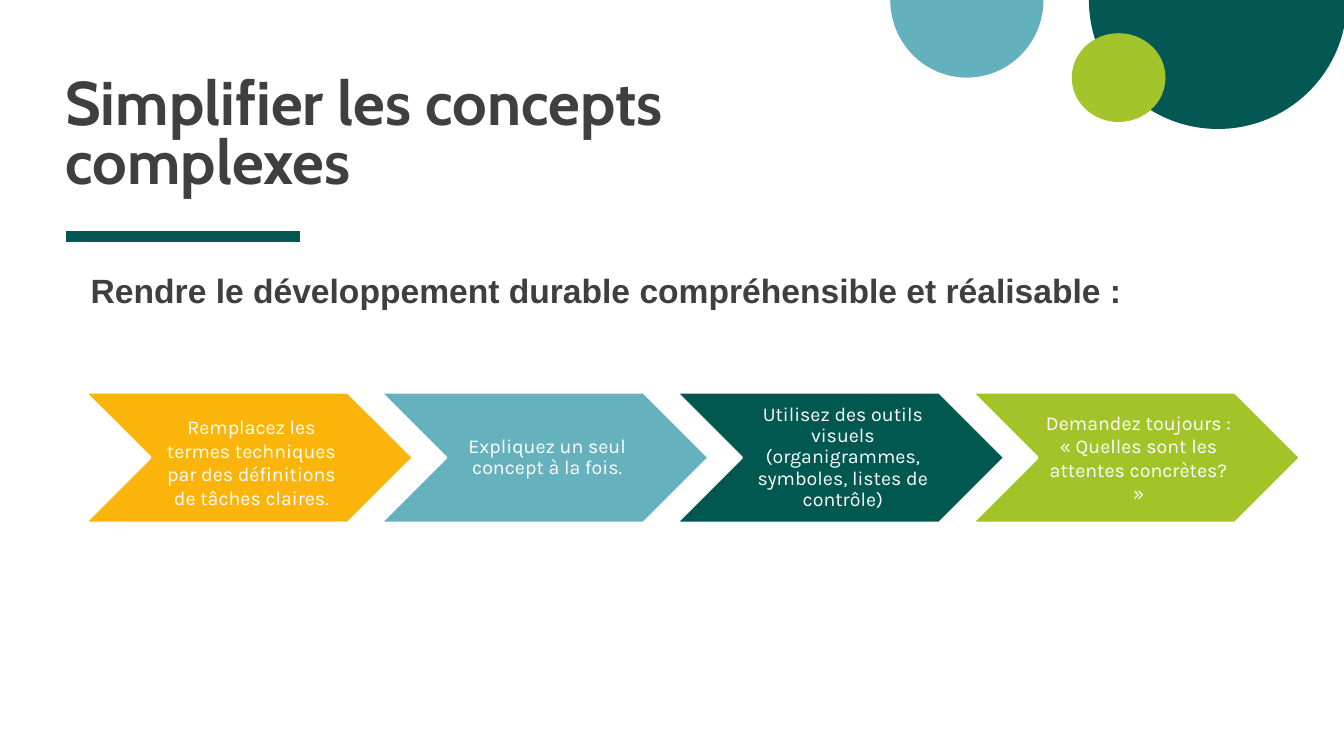
import pptx
import pptx.dml.color
import pptx.enum.shapes
import pptx.enum.text
import pptx.util
from lxml import etree

SHAPES = pptx.enum.shapes.MSO_SHAPE
ALIGN = pptx.enum.text.PP_ALIGN
ANCHOR = pptx.enum.text.MSO_ANCHOR
TEAL, BLUE, GREEN = "035854", "64B1BE", "A3C42A"
WHITE, CHARCOAL = "FFFFFF", "3F3F3F"


def colour(value):
    return pptx.dml.color.RGBColor.from_string(value)


class Page:
    """Draw styled elements on one slide, placed in percent of its width and height."""

    def __init__(self, deck):
        self.deck = deck
        self.slide = deck.slides.add_slide(deck.slide_layouts[6])
        self.slide.background.fill.solid()
        self.slide.background.fill.fore_color.rgb = colour(WHITE)

    def place(self, *percents):
        sides = (self.deck.slide_width, self.deck.slide_height) * 2
        return [round(side * share / 100) for side, share in zip(sides, percents)]

    def shape(self, preset, area, fill, adjustments=(), outline=None):
        shape = self.slide.shapes.add_shape(preset, *self.place(*area))
        shape.shadow.inherit = False
        for index, value in enumerate(adjustments):
            shape.adjustments[index] = value
        shape.fill.solid()
        shape.fill.fore_color.rgb = colour(fill)
        if outline:
            shape.line.color.rgb = colour(outline)
            shape.line.width = pptx.util.Pt(2)
        else:
            shape.line.fill.background()

    def rule(self, ends, shade, width):
        rule = self.slide.shapes.add_connector(
            pptx.enum.shapes.MSO_CONNECTOR.STRAIGHT, *self.place(*ends))
        rule.line.color.rgb = colour(shade)
        rule.line.width = pptx.util.Pt(width)
        properties = rule._element.spPr
        etree.SubElement(properties, pptx.oxml.ns.qn("a:effectLst"))

    def text(self, area, lines, font, size, shade, bold=False, spacing=1.0,
             align=ALIGN.LEFT, anchor=ANCHOR.TOP, insets=(0, 0, 0, 0)):
        box = self.slide.shapes.add_textbox(*self.place(*area))
        frame = box.text_frame
        frame.word_wrap = True
        frame.vertical_anchor = anchor
        (frame.margin_left, frame.margin_top, frame.margin_right,
         frame.margin_bottom) = map(pptx.util.Inches, insets)
        frame.text = "\n".join(lines)
        for para in frame.paragraphs:
            para.alignment = align
            para.line_spacing = spacing
            para.font.name = font
            para.font.size = pptx.util.Pt(size)
            para.font.bold = bold
            para.font.color.rgb = colour(shade)


def main():
    deck = pptx.Presentation()
    deck.slide_width = pptx.util.Inches(13.33)
    deck.slide_height = pptx.util.Inches(7.5)
    page = Page(deck)

    half_turn = (0, 108)
    page.shape(SHAPES.PIE, (81.02, -17.07, 19.2, 34.13), TEAL, half_turn)
    page.rule((4.88, 31.33, 22.36, 31.33), TEAL, 8)
    page.shape(SHAPES.PIE, (66.24, -10.27, 11.4, 20.53), BLUE, half_turn)
    page.shape(SHAPES.OVAL, (79.74, 4.4, 6.98, 11.73), GREEN)

    page.text((4.88, 2.8, 55.66, 23.2), ["Simplifier les concepts complexes"],
              "Cabin", 44, CHARCOAL, bold=True, spacing=0.8, anchor=ANCHOR.BOTTOM)
    page.text((6.75, 36.67, 82.15, 11.73),
              ["Rendre le développement durable compréhensible et réalisable :"],
              "Arial", 24, CHARCOAL, bold=True, spacing=0.8)

    top, height, pitch = 51.87, 17.33, 22
    steps = [
        ("FBB50A", 1.2, 1.0,
         ["Remplacez les termes techniques par des définitions de tâches claires."]),
        ("65B1BE", 0, 0.9, ["Expliquez un seul concept à la fois."]),
        ("005851", 0, 0.9,
         ["Utilisez des outils visuels (organigrammes, symboles, listes de contrôle)"]),
        ("A3C429", 0, 1.0,
         ["Demandez toujours : ", "« Quelles sont les attentes concrètes? »"]),
    ]
    for column, (fill, drop, spacing, lines) in enumerate(steps):
        left = 6.3 + column * pitch
        page.shape(SHAPES.CHEVRON, (left, top, 24.46, height), fill, (0.5,), WHITE)
        page.text((left + 4.88, top + drop, 14.7, height - drop), lines,
                  "Karla", 14, WHITE, spacing=spacing, align=ALIGN.CENTER,
                  anchor=ANCHOR.MIDDLE, insets=(0.08, 0.03, 0.03, 0.03))

    deck.save("out.pptx")


if __name__ == "__main__":
    main()
